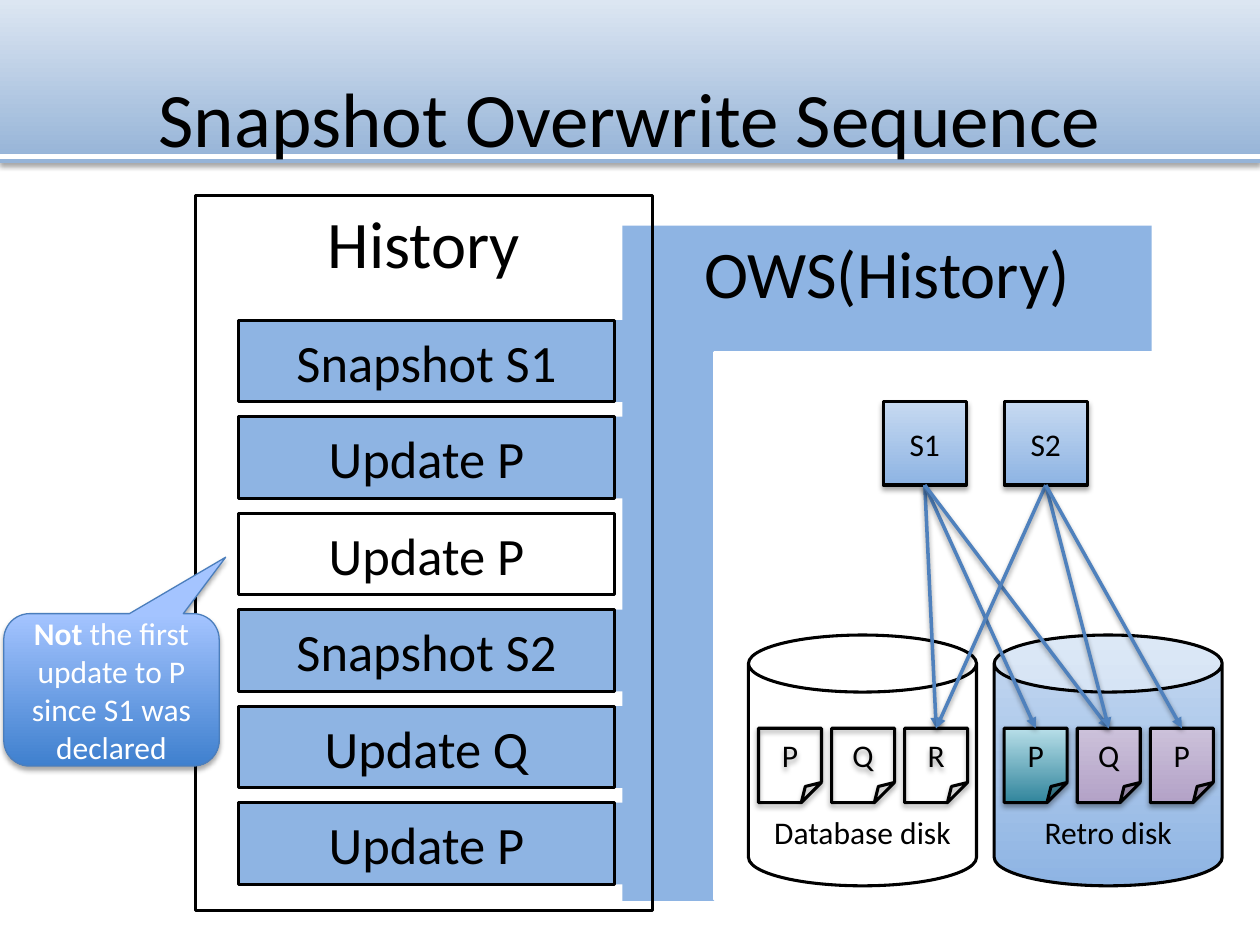
from dataclasses import dataclass

from lxml.etree import SubElement
from pptx import Presentation
from pptx.dml.color import RGBColor
from pptx.enum.shapes import MSO_CONNECTOR as Connector, MSO_SHAPE as Shape
from pptx.enum.text import MSO_ANCHOR as Anchor, PP_ALIGN as Align
from pptx.oxml.ns import qn
from pptx.util import Inches, Pt


@dataclass(frozen=True)
class Theme:
    font: str = "Calibri"
    title_size: int = 44
    heading_size: int = 38
    row_size: int = 30
    label_size: int = 18
    outline: float = 1.75
    arrow_width: float = 2
    black: str = "000000"
    white: str = "FFFFFF"
    blue: str = "8EB4E3"
    arrow: str = "4F81BD"
    callout_line: str = "4B7EBC"
    # Gradients run from top to bottom
    band: tuple = ("DCE6F2", "95B3D7")
    callout: tuple = ("A4C4FF", "3F80CE")
    snapshot: tuple = ("C6D9F1", "8EB4E3")
    teal: tuple = ("B7DEE8", "31859C")
    purple: tuple = ("CCC1DA", "B3A2C7")


THEME = Theme()


def rgb(value):
    return RGBColor.from_string(value)


def write(shape, *runs, size, color=THEME.black, anchor=Anchor.MIDDLE):
    """Fill a shape with one centred paragraph; each run is (text, bold)."""
    frame = shape.text_frame
    frame.word_wrap = True
    frame.vertical_anchor = anchor
    paragraph = frame.paragraphs[0]
    paragraph.alignment = Align.CENTER
    for text, bold in runs:
        run = paragraph.add_run()
        run.text = text
        run.font.name = THEME.font
        run.font.size = Pt(size)
        run.font.bold = bold
        run.font.color.rgb = rgb(color)


def paint(shape, fill):
    """Apply no fill, a solid colour or a (top, bottom) gradient."""
    if fill is None:
        shape.fill.background()
    elif isinstance(fill, str):
        shape.fill.solid()
        shape.fill.fore_color.rgb = rgb(fill)
    else:
        shape.fill.gradient()
        shape.fill.gradient_angle = 270
        for stop, position, color in zip(shape.fill.gradient_stops, (0, 1), fill):
            stop.position = position
            stop.color.rgb = rgb(color)


def cast_shadow(effects, opacity=35):
    outer = SubElement(effects, qn("a:outerShdw"), blurRad=str(Pt(3.1)),
                       dist=str(Pt(1.8)), dir="5400000", rotWithShape="0")
    color = SubElement(outer, qn("a:srgbClr"), val=THEME.black)
    SubElement(color, qn("a:alpha"), val=str(opacity * 1000))


def add_box(slide, box, kind=Shape.RECTANGLE, fill=None, line=None,
            width=THEME.outline, shadow=False):
    shape = slide.shapes.add_shape(kind, *map(Inches, box))
    paint(shape, fill)
    if line:
        shape.line.color.rgb = rgb(line)
        shape.line.width = Pt(width)
    else:
        shape.line.fill.background()
    shape.shadow.inherit = False
    if shadow:
        cast_shadow(shape._element.spPr.find(qn("a:effectLst")))
    return shape


def add_line(slide, start, end, color, width):
    line = slide.shapes.add_connector(Connector.STRAIGHT,
                                      *map(Inches, (*start, *end)))
    line.line.color.rgb = rgb(color)
    line.line.width = Pt(width)
    return line, SubElement(line._element.spPr, qn("a:effectLst"))


def add_arrow(slide, snapshot, page):
    arrow, effects = add_line(slide, (0, 0), (1, 1), THEME.arrow, THEME.arrow_width)
    arrow.begin_connect(snapshot, 2)
    arrow.end_connect(page, 0)
    SubElement(arrow._element.spPr.find(qn("a:ln")), qn("a:tailEnd"), type="triangle")
    cast_shadow(effects, opacity=38)


def build_header(slide, box):
    left, top, width, height = box
    add_box(slide, box, fill=THEME.band, shadow=True)
    rule = top + height - 0.05
    add_line(slide, (left, rule), (left + width, rule), THEME.white, 3)
    title = slide.shapes.title
    title._element.getparent().append(title._element)  # bring above the band
    title.left, title.top = Inches(left + 0.5), Inches(top + 0.3)
    title.width, title.height = Inches(width - 1), Inches(1.25)
    write(title, ("Snapshot Overwrite Sequence", False), size=THEME.title_size)


def build_overwrite_area(slide, box):
    """Draw the blue L behind the history: a panel with its inner corner cut out."""
    left, top, width, _ = box
    panel = add_box(slide, box, fill=THEME.blue)
    write(panel, ("OWS(History)", False), size=THEME.heading_size, anchor=Anchor.TOP)
    add_box(slide, (left + 0.73, top + 1.01, width - 0.72, 4.34),
            fill=THEME.white, line=THEME.white)


def build_history(slide, box, entries):
    """Entries are (text, in_sequence); those in the sequence reach the blue L."""
    left, top, _, _ = box
    row_left, first_top, row_height, rows_height = left + 0.34, top + 0.99, 0.65, 4.48
    pitch = (rows_height - row_height) / (len(entries) - 1)
    row_tops = [first_top + index * pitch for index in range(len(entries))]
    for row_top, (_, in_sequence) in zip(row_tops, entries):
        if in_sequence:
            add_box(slide, (row_left, row_top, 3.07, row_height), fill=THEME.blue)
    frame = add_box(slide, box, line=THEME.black)
    write(frame, ("History", False), size=THEME.heading_size, anchor=Anchor.TOP)
    for row_top, (text, _) in zip(row_tops, entries):
        row = add_box(slide, (row_left, row_top, 2.99, row_height), line=THEME.black)
        write(row, (text, False), size=THEME.row_size)


def build_callout(slide, box):
    callout = add_box(slide, box, Shape.ROUNDED_RECTANGULAR_CALLOUT,
                      fill=THEME.callout, line=THEME.callout_line, width=0.75,
                      shadow=True)
    for index, value in enumerate((0.53, -0.87, 0.17)):
        callout.adjustments[index] = value
    write(callout, ("Not ", True), ("the first update to P since S1 was declared", False),
          size=THEME.label_size, color=THEME.white)


def set_fold(page, ratio):
    """Set the corner size in XML, as adjustments does not offer it for this shape."""
    guides = page._element.spPr.find(qn("a:prstGeom")).get_or_add_avLst()
    SubElement(guides, qn("a:gd"), name="adj", fmla=f"val {round(ratio * 100000)}")


def build_disk(slide, box, label, pages, fill=None):
    """Draw a disk with its (text, fill) pages, and return the pages."""
    left, top, _, _ = box
    disk = add_box(slide, box, Shape.CAN, fill=fill, line=THEME.black)
    write(disk, (label, False), size=THEME.label_size, anchor=Anchor.BOTTOM)
    shapes = []
    for index, (text, page_fill) in enumerate(pages):
        page = add_box(slide, (left + 0.08 + index * 0.58, top + 0.74, 0.5, 0.59),
                       Shape.FOLDED_CORNER, fill=page_fill, line=THEME.black,
                       shadow=True)
        set_fold(page, 0.32)
        write(page, (text, False), size=THEME.label_size)
        shapes.append(page)
    return shapes


def build_storage(slide, box):
    left, top, _, _ = box
    disk_top = top + 1.85
    _, _, page_r = build_disk(
        slide, (left, disk_top, 1.81, 1.99), "Database disk",
        [(name, None) for name in "PQR"])
    old_p, old_q, new_p = build_disk(
        slide, (left + 1.95, disk_top, 1.81, 1.99), "Retro disk",
        [("P", THEME.teal), ("Q", THEME.purple), ("P", THEME.purple)],
        fill=THEME.snapshot)
    targets = {"S1": (page_r, old_p, old_q), "S2": (page_r, old_q, new_p)}
    for index, (name, pages) in enumerate(targets.items()):
        snapshot = add_box(slide, (left + 1.07 + index * 0.96, top, 0.66, 0.66),
                           fill=THEME.snapshot, line=THEME.black, shadow=True)
        write(snapshot, (name, False), size=THEME.label_size)
        for page in pages:
            add_arrow(slide, snapshot, page)


def main():
    deck = Presentation()
    deck.slide_width, deck.slide_height = Inches(10), Inches(7.5)
    slide = deck.slides.add_slide(deck.slide_layouts[5])
    build_header(slide, (0, 0, 10, 1.29))
    build_overwrite_area(slide, (4.94, 1.79, 4.2, 5.36))
    build_history(slide, (1.55, 1.55, 3.63, 5.68), [
        ("Snapshot S1", True), ("Update P", True), ("Update P", False),
        ("Snapshot S2", True), ("Update Q", True), ("Update P", True)])
    build_callout(slide, (0.03, 4.87, 1.71, 1.21))
    build_storage(slide, (5.94, 3.19, 3.76, 3.84))
    deck.save("out.pptx")


if __name__ == "__main__":
    main()
